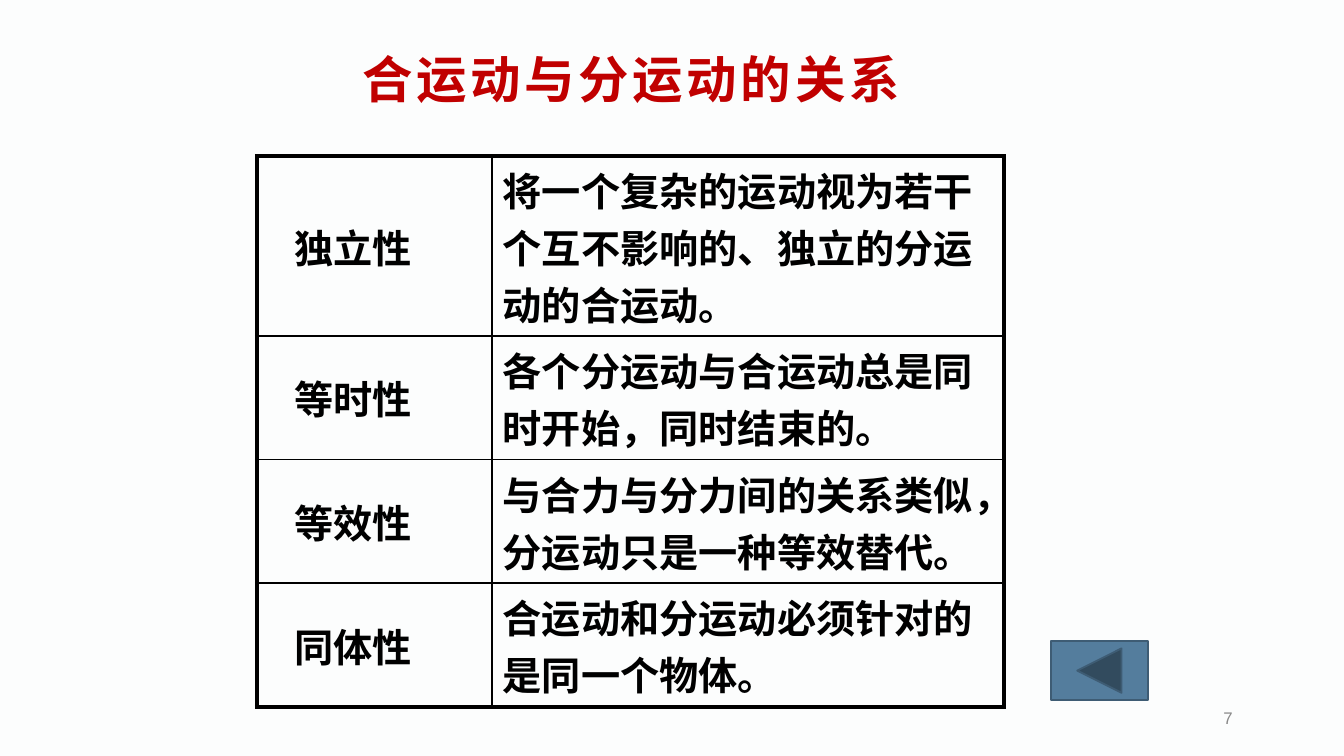
from dataclasses import dataclass

from lxml import etree
from pptx import Presentation
from pptx.dml.color import RGBColor
from pptx.enum.shapes import MSO_SHAPE
from pptx.enum.text import MSO_ANCHOR, PP_ALIGN
from pptx.oxml.ns import qn
from pptx.util import Inches, Pt

BACK_BUTTON = MSO_SHAPE.ACTION_BUTTON_BACK_OR_PREVIOUS
MIDDLE = MSO_ANCHOR.MIDDLE
LEFT, CENTER, RIGHT = PP_ALIGN.LEFT, PP_ALIGN.CENTER, PP_ALIGN.RIGHT
TITLE_ONLY = 5


@dataclass(frozen=True)
class Theme:
    font: str = "Arial"
    background: str = "FCFDFD"
    title: str = "C00000"
    text: str = "000000"
    muted: str = "898989"
    button: str = "547D9D"
    button_line: str = "3E5C74"
    title_size: float = 27
    table_size: float = 21
    number_size: float = 9
    outer_border: float = 2.25
    inner_border: float = 1


THEME = Theme()

RELATIONS = [
    ("独立性", "将一个复杂的运动视为若干个互不影响的、独立的分运动的合运动。"),
    ("等时性", "各个分运动与合运动总是同时开始，同时结束的。"),
    ("等效性", "与合力与分力间的关系类似，分运动只是一种等效替代。"),
    ("同体性", "合运动和分运动必须针对的是同一个物体。"),
]
COLUMN_WIDTHS = [1.75, 3.81]
LEFT_MARGINS = [0.28, 0.08]
ROW_HEIGHTS = [1.34, 0.92, 0.92, 0.92]


def color(value):
    return RGBColor.from_string(value)


def write(text_frame, text, size, text_color, align=LEFT, bold=False, spacing=0):
    """Put one formatted run into the first paragraph; spacing is in points."""
    text_frame.word_wrap = True
    text_frame.vertical_anchor = MIDDLE
    paragraph = text_frame.paragraphs[0]
    paragraph.alignment = align
    run = paragraph.add_run()
    run.text = text
    run.font.name = THEME.font
    run.font.size = Pt(size)
    run.font.bold = bold
    run.font.color.rgb = color(text_color)
    properties = run._r.get_or_add_rPr()
    properties.set("lang", "zh-CN")
    if spacing:
        properties.set("spc", str(spacing * 100))


def add_title(slide, text):
    title = slide.shapes.title
    title.left, title.top = Inches(1.32), Inches(0.11)
    title.width, title.height = Inches(6.75), Inches(0.94)
    write(title.text_frame, text, THEME.title_size, THEME.title, CENTER, True, 2)


def set_borders(cell, widths):
    """Draw the cell's sides; widths maps L, R, T, B (in that order) to points."""
    properties = cell._tc.get_or_add_tcPr()
    for index, (side, width) in enumerate(widths.items()):
        line = etree.Element(qn("a:ln" + side), w=str(Pt(width)))
        fill = etree.SubElement(line, qn("a:solidFill"))
        etree.SubElement(fill, qn("a:srgbClr"), val=THEME.text)
        properties.insert(index, line)


def border_width(is_outer):
    return THEME.outer_border if is_outer else THEME.inner_border


def add_relation_table(slide, rows):
    frame = slide.shapes.add_table(
        len(rows), len(COLUMN_WIDTHS), Inches(1.91), Inches(1.16),
        Inches(sum(COLUMN_WIDTHS)), Inches(sum(ROW_HEIGHTS)))
    table = frame.table
    table.first_row = table.horz_banding = False
    for column, width in zip(table.columns, COLUMN_WIDTHS):
        column.width = Inches(width)
    for row, height in zip(table.rows, ROW_HEIGHTS):
        row.height = Inches(height)
    for r, texts in enumerate(rows):
        for c, text in enumerate(texts):
            cell = table.cell(r, c)
            cell.fill.background()
            cell.vertical_anchor = MIDDLE
            cell.margin_left = Inches(LEFT_MARGINS[c])
            cell.margin_right = Inches(0.07)
            cell.margin_top = cell.margin_bottom = Inches(0.04)
            write(cell.text_frame, text, THEME.table_size, THEME.text, bold=True)
            set_borders(cell, {
                "L": border_width(c == 0),
                "R": border_width(c == len(texts) - 1),
                "T": border_width(r == 0),
                "B": border_width(r == len(rows) - 1)})


def add_back_button(slide):
    button = slide.shapes.add_shape(
        BACK_BUTTON, Inches(7.82), Inches(4.77), Inches(0.72), Inches(0.44))
    button.shadow.inherit = False
    button.fill.solid()
    button.fill.fore_color.rgb = color(THEME.button)
    button.line.color.rgb = color(THEME.button_line)
    button.line.width = Pt(1)


def add_page_number(slide, number):
    box = slide.shapes.add_textbox(
        Inches(7.06), Inches(5.21), Inches(2.21), Inches(0.26))
    write(box.text_frame, number, THEME.number_size, THEME.muted, RIGHT)


def main():
    presentation = Presentation()
    presentation.slide_width = Inches(10)
    presentation.slide_height = Inches(10 * 9 / 16)
    slide = presentation.slides.add_slide(presentation.slide_layouts[TITLE_ONLY])
    slide.background.fill.solid()
    slide.background.fill.fore_color.rgb = color(THEME.background)
    add_page_number(slide, "7")
    add_title(slide, "合运动与分运动的关系")
    add_relation_table(slide, RELATIONS)
    add_back_button(slide)
    presentation.save("out.pptx")


if __name__ == "__main__":
    main()
